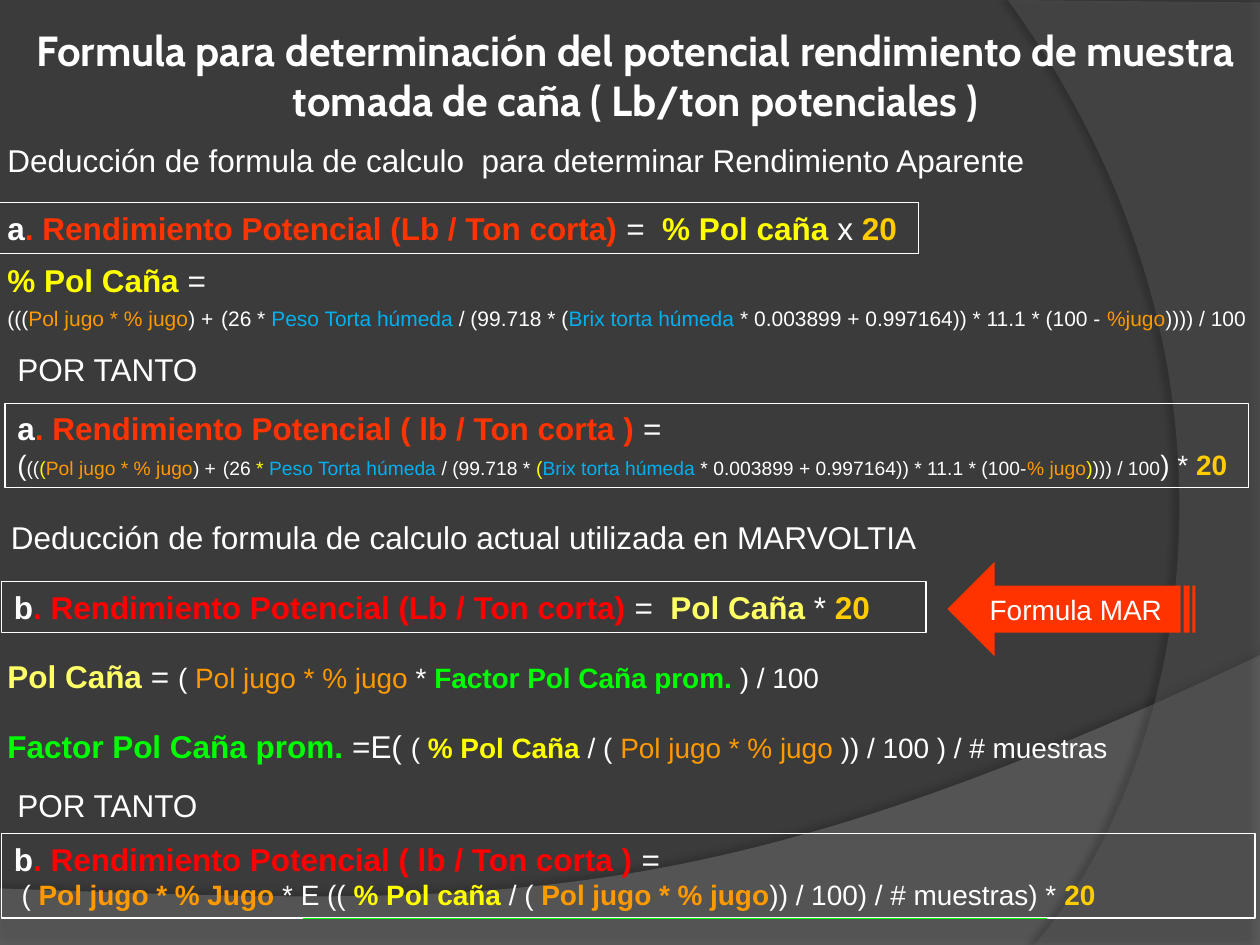
from lxml import etree
from pptx import Presentation
from pptx.dml.color import RGBColor
from pptx.enum.shapes import MSO_CONNECTOR, MSO_SHAPE
from pptx.enum.text import MSO_ANCHOR as Anchor, MSO_AUTO_SIZE as AutoSize, PP_ALIGN as Align
from pptx.oxml import parse_xml
from pptx.oxml.ns import nsdecls, qn
from pptx.util import Cm, Pt


def color(hex_string):
    return RGBColor.from_string(hex_string)


def add_runs(paragraph, size, runs):
    """Each run is (text, (colour, bold)) with an optional size of its own."""
    for text, (hex_string, bold), *own_size in runs:
        run = paragraph.add_run()
        run.text = text
        font_format = {"name": "Arial", "size": Pt(own_size[0] if own_size else size), "bold": bold}
        for name, value in font_format.items():
            setattr(run.font, name, value)
        run.font.color.rgb = color(hex_string)


presentation = Presentation()
presentation.slide_width, presentation.slide_height = Cm(25.4), Cm(19.05)
slide = presentation.slides.add_slide(presentation.slide_layouts[5])
slide.background.fill.solid()
slide.background.fill.fore_color.rgb = color("3B3B3B")

# Text styles: colour and weight
WHITE, WHITE_BOLD = ("FFFFFF", False), ("FFFFFF", True)
ORANGE, ORANGE_BOLD = ("FF9900", False), ("FF9900", True)
YELLOW, YELLOW_BOLD, PALE_BOLD = ("FFFF00", False), ("FFFF00", True), ("FFFF66", True)
GOLD_BOLD, GREEN_BOLD, BLUE = ("FFCC00", True), ("00FF00", True), ("00B0F0", False)
VERMILION_BOLD, RED_BOLD = ("FF3300", True), ("FF0000", True)

# Curved backdrop: four Bezier points, closing corners, fill, opacity, shadow
backdrops = [
    ([(25.4, 13.21), (14.2, 18.52), (9.93, 18.26), (0, 17.91)], [(0, 19.05), (25.4, 19.05)],
     "7F7F7F", 45, 35, 3.5, 270),
    ([(20.85, 19.05), (23.75, 15.72), (25.86, 7.62), (20.32, 0)], [(25.4, 0.05), (25.4, 19.05)],
     "5E5E5E", 40, 45, 4, 180),
]
STEPS = 60
for order, (curve, corners, fill, opacity, shadow_opacity, distance, angle) in enumerate(backdrops):
    points = []
    for step in range(STEPS + 1):
        t = step / STEPS
        weights = ((1 - t) ** 3, 3 * t * (1 - t) ** 2, 3 * t * t * (1 - t), t ** 3)
        points.append([sum(w * point[axis] for w, point in zip(weights, curve)) for axis in (0, 1)])
    points = [(Cm(x), Cm(y)) for x, y in points + corners]
    builder = slide.shapes.build_freeform(*points[0])
    builder.add_line_segments(points[1:], close=True)
    shape = builder.convert_to_shape()
    shape.fill.solid()
    shape.fill.fore_color.rgb = color(fill)
    shape.line.fill.background()
    properties = shape._element.spPr
    fill_color = properties.find(qn("a:solidFill"))[0]
    etree.SubElement(fill_color, qn("a:alpha")).set("val", str(opacity * 1000))
    properties.append(parse_xml(
        f'<a:effectLst {nsdecls("a")}><a:outerShdw blurRad="{Pt(4)}" dist="{Pt(distance)}" '
        f'dir="{angle * 60000}" algn="ctr" rotWithShape="0"><a:srgbClr val="000000">'
        f'<a:alpha val="{shadow_opacity * 1000}"/></a:srgbClr></a:outerShdw></a:effectLst>'))
    slide.shapes._spTree.insert(2 + order, shape._element)

# Title
title = slide.shapes.title
title.left, title.top, title.width, title.height = Cm(0.51), Cm(0.33), Cm(24.61), Cm(2.36)
title.text = ("Formula para determinación del potencial rendimiento de muestra "
              "tomada de caña ( Lb/ton potenciales )")
title_frame = title.text_frame
frame_format = {"vertical_anchor": Anchor.MIDDLE, "auto_size": AutoSize.NONE, "word_wrap": True}
frame_format |= {f"margin_{side}": Cm(0.13) for side in ("left", "top", "right", "bottom")}
for name, value in frame_format.items():
    setattr(title_frame, name, value)
title_paragraph = title_frame.paragraphs[0]
title_paragraph.alignment = Align.CENTER
for name, value in {"name": "Cabin", "size": Pt(24), "bold": True}.items():
    setattr(title_paragraph.runs[0].font, name, value)
title_paragraph.runs[0].font.color.rgb = color("FFFFFF")

# Formulas: left, top, width, wrap, outlined, paragraphs of (size, runs)
therefore = [(18, [("POR TANTO", WHITE)])]
formulas = [
    (-0.1, 2.72, 21.21, False, False, [
        (18, [("Deducción de formula de calculo  para determinar Rendimiento Aparente", WHITE)])]),
    (-0.1, 4.09, 18.62, False, True, [
        (18, [("a", WHITE_BOLD), (". Rendimiento Potencial (Lb / Ton corta)", VERMILION_BOLD),
              (" =  ", WHITE), ("% Pol caña", YELLOW_BOLD), (" x ", WHITE), ("20", GOLD_BOLD)])]),
    (-0.1, 5.13, 25.5, True, False, [
        (18, [("% Pol Caña", YELLOW_BOLD), (" =", WHITE)]),
        (12, [("(((", WHITE), ("Pol jugo * % jugo", ORANGE), (") +", WHITE), (" ", WHITE, 16),
              ("(26 * ", WHITE), ("Peso Torta húmeda", BLUE), (" / (99.718 * (", WHITE),
              ("Brix torta húmeda", BLUE), (" * 0.003899 + 0.997164)) * 11.1 * (100 - ", WHITE),
              ("%jugo", ORANGE), (")))) / 100", WHITE)])]),
    (0.1, 6.93, 4.19, False, False, therefore),
    (0.1, 8.13, 25.07, False, True, [
        (18, [("a", WHITE_BOLD), (". Rendimiento Potencial ( lb / Ton corta )", VERMILION_BOLD),
              (" =", WHITE)]),
        (11, [("(", WHITE, 16), ("((", WHITE), ("(", YELLOW), ("Pol jugo * % jugo", ORANGE),
              (") +", WHITE), (" ", WHITE, 14), ("(26 ", WHITE), ("* ", YELLOW),
              ("Peso Torta húmeda", BLUE), (" / (99.718 * ", WHITE), ("(", YELLOW),
              ("Brix torta húmeda ", BLUE), ("* 0.003899 + 0.997164)) * 11.1 * (100-", WHITE),
              ("% jugo", ORANGE), (")", YELLOW), ("))) / 100", WHITE), (") * ", WHITE, 16),
              ("20", GOLD_BOLD, 16)])]),
    (-0.03, 10.31, 19.33, False, False, [
        (18, [("Deducción de formula de calculo actual utilizada en MARVOLTIA", WHITE)])]),
    (0.03, 11.73, 18.64, False, True, [
        (18, [("b", WHITE_BOLD), (". Rendimiento Potencial (Lb / Ton corta)", RED_BOLD),
              (" =  ", WHITE), ("Pol Caña", PALE_BOLD), (" * ", WHITE), ("20", GOLD_BOLD)])]),
    (-0.1, 13.13, 25.5, True, False, [
        (16, [("Pol Caña", PALE_BOLD, 18), (" = ", WHITE, 18), ("( ", WHITE),
              ("Pol jugo * % jugo", ORANGE), (" * ", WHITE),
              ("Factor Pol Caña prom.", GREEN_BOLD), (" ) / 100", WHITE)])]),
    (-0.1, 14.53, 23.55, False, False, [
        (16, [("Factor Pol Caña prom.", GREEN_BOLD, 18), (" =E( ", WHITE, 18), ("( ", WHITE),
              ("% Pol Caña", YELLOW_BOLD), (" / ( ", WHITE), ("Pol jugo * % jugo", ORANGE),
              (" )) / 100 ) / # muestras", WHITE)])]),
    (0.1, 15.72, 4.19, False, False, therefore),
    (0.03, 16.81, 25.27, True, True, [
        (18, [("b", WHITE_BOLD), (". Rendimiento Potencial ( lb / Ton corta )", RED_BOLD),
              (" =", WHITE)]),
        (16, [(" ( ", WHITE), ("Pol jugo * % Jugo", ORANGE_BOLD), (" * E ((", WHITE),
              (" % Pol caña", YELLOW_BOLD), (" / ( ", WHITE), ("Pol jugo * % jugo", ORANGE_BOLD),
              (")) / 100) / # muestras) * ", WHITE), ("20", GOLD_BOLD)])]),
]
for left, top, width, wrap, outlined, paragraphs in formulas:
    height = 1.02 if len(paragraphs) == 1 else 1.7
    bounds = Cm(left), Cm(top), Cm(width), Cm(height)
    if outlined:
        shape = slide.shapes.add_shape(MSO_SHAPE.RECTANGLE, *bounds)
        shape.shadow.inherit = False
        shape.fill.background()
        shape.line.color.rgb = color("FFFFFF")
        shape.line.width = Pt(0.75)
    else:
        shape = slide.shapes.add_textbox(*bounds)
    frame = shape.text_frame
    frame_format = {"word_wrap": wrap, "auto_size": AutoSize.SHAPE_TO_FIT_TEXT,
                    "vertical_anchor": Anchor.TOP}
    for name, value in frame_format.items():
        setattr(frame, name, value)
    for index, (size, runs) in enumerate(paragraphs):
        paragraph = frame.add_paragraph() if index else frame.paragraphs[0]
        paragraph.alignment = Align.LEFT
        add_runs(paragraph, size, runs)

# Green underline of the averaged factor
underline = slide.shapes.add_connector(MSO_CONNECTOR.STRAIGHT, Cm(6.1), Cm(18.52), Cm(21.11), Cm(18.52))
underline.line.color.rgb = color("00FF00")
underline.line.width = Pt(0.75)
etree.SubElement(underline._element.spPr, qn("a:effectLst"))

# Arrow pointing left at formula b
arrow = slide.shapes.add_shape(MSO_SHAPE.STRIPED_RIGHT_ARROW, Cm(19.1), Cm(11.33), Cm(5), Cm(1.9))
arrow._element.spPr.find(qn("a:xfrm")).set("flipH", "1")
arrow.shadow.inherit = False
arrow.fill.solid()
arrow.fill.fore_color.rgb = color("FF3300")
arrow.line.fill.background()
arrow.text_frame.vertical_anchor = Anchor.MIDDLE
arrow.text_frame.paragraphs[0].alignment = Align.CENTER
add_runs(arrow.text_frame.paragraphs[0], 16, [("Formula MAR", WHITE)])

presentation.save("out.pptx")
